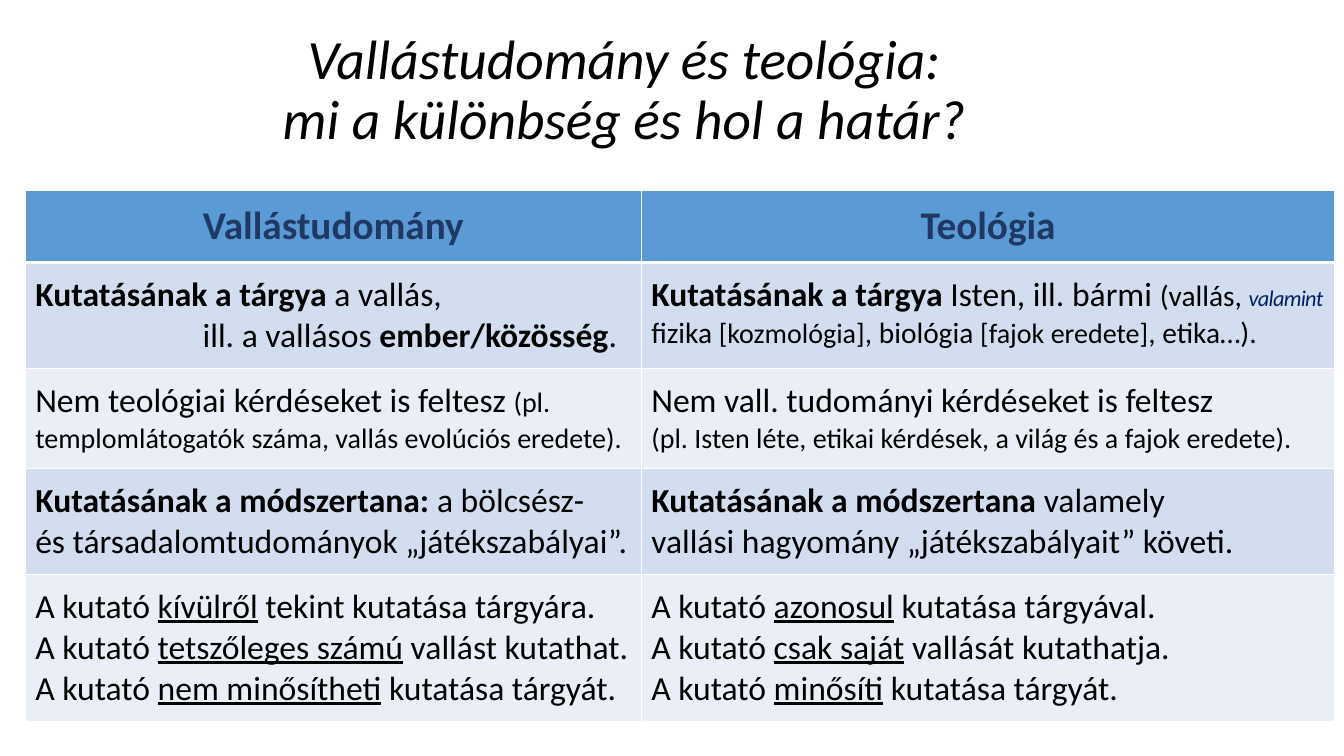
import pptx
import pptx.util
import pptx.dml.color
import pptx.enum.text
import pptx.oxml
from pptx.oxml.ns import nsdecls

Inches, Pt = pptx.util.Inches, pptx.util.Pt
ALIGN = pptx.enum.text.PP_ALIGN
MIDDLE = pptx.enum.text.MSO_ANCHOR.MIDDLE

COLORS = {"black": "000000", "navy": "203864", "ink": "002060", "white": "FFFFFF",
          "header": "5B9BD5", "odd": "D2DEEF", "even": "EAEFF7"}

# Each span is its text and the format values that differ from the defaults.
BOLD, UNDER = {"bold": True}, {"underline": True}
S20, S21 = {"size": 20}, {"size": 21}
HEAD = {"size": 28, "bold": True, "color": "navy"}
NOTE = {"size": 16, "italic": True, "color": "ink"}

TITLE = [("Vallástudomány és teológia:\nmi a különbség és hol a határ?",
          {"size": 39.6, "italic": True})]


def researcher(underlined, ending):
    return [("A kutató ", {}), (underlined, UNDER), (ending, {})]


# Rows of cells; a cell is a list of paragraphs, a paragraph a list of spans.
ROWS = [
    [[[("Vallástudomány", HEAD)]], [[("Teológia", HEAD)]]],
    [[[("Kutatásának a tárgya", BOLD), (" a vallás,", {})],
      [("ill. a vallásos ", {}), ("ember/közösség", BOLD), (".", {})]],
     [[("Kutatásának a tárgya", BOLD), (" Isten, ill. bármi ", {}), ("(vallás, ", S21),
       ("valamint", {**NOTE, "spacing": -50}), (" ", {**NOTE, "size": 12}),
       ("fizika ", S21), ("[kozmológia]", S20), (", biológia ", S21),
       ("[fajok eredete]", S20), (", etika…).", S21)]]],
    [[[("Nem teológiai kérdéseket is feltesz ", {}),
       ("(pl. templomlátogatók száma, vallás evolúciós eredete).", S20)]],
     [[("Nem vall. tudományi kérdéseket is feltesz", {}),
       (" \n(pl. Isten léte, etikai kérdések, a világ és a fajok eredete).", S20)]]],
    [[[("Kutatásának a módszertana:", BOLD),
       (" a bölcsész- \nés társadalomtudományok „játékszabályai”.", {})]],
     [[("Kutatásának a módszertana", BOLD),
       (" valamely \nvallási hagyomány „játékszabályait” követi.", {})]]],
    [[researcher("kívülről", " tekint kutatása tárgyára."),
      researcher("tetszőleges számú", " vallást kutathat."),
      researcher("nem minősítheti", " kutatása tárgyát.")],
     [researcher("azonosul", " kutatása tárgyával."),
      researcher("csak saját", " vallását kutathatja."),
      researcher("minősíti", " kutatása tárgyát.")]],
]
COLUMN_WIDTHS = [6.11, 6.88]
ROW_HEIGHTS = [0.69, 1.04, 0.98, 1.05, 1.45]
SECOND_LINE_INDENT = 1.66
MARGINS = {"margin_left": 0.1, "margin_right": 0.1, "margin_top": 0.12, "margin_bottom": 0.12}


def write_spans(para, spans):
    for text, changes in spans:
        look = {"size": 24, "bold": False, "italic": False, "underline": False,
                "color": "black", "spacing": 0, **changes}
        color, spacing = look.pop("color"), look.pop("spacing")
        look.update(size=Pt(look["size"]), name="Calibri")
        for number, line in enumerate(text.split("\n")):
            if number:
                para.add_line_break()
            span = para.add_run()
            span.text = line
            for name, value in look.items():
                setattr(span.font, name, value)
            span.font.color.rgb = pptx.dml.color.RGBColor.from_string(COLORS[color])
            if spacing:
                span.font._element.set("spc", str(spacing))


def add_borders(cell, bottom_width):
    properties = cell._tc.get_or_add_tcPr()
    for place, side in enumerate("LRTB"):
        width = Pt(bottom_width if side == "B" else 1)
        properties.insert(place, pptx.oxml.parse_xml(
            f'<a:ln{side} {nsdecls("a")} w="{width}"><a:solidFill>'
            f'<a:srgbClr val="{COLORS["white"]}"/></a:solidFill></a:ln{side}>'))


def fill_cell(cell, paragraphs, row):
    for name, value in MARGINS.items():
        setattr(cell, name, Inches(value))
    cell.fill.solid()
    shade = "header" if row == 0 else "odd" if row % 2 else "even"
    cell.fill.fore_color.rgb = pptx.dml.color.RGBColor.from_string(COLORS[shade])
    add_borders(cell, 3 if row == 0 else 1)
    frame = cell.text_frame
    for number, spans in enumerate(paragraphs):
        para = frame.add_paragraph() if number else frame.paragraphs[0]
        para.alignment = ALIGN.CENTER if row == 0 else ALIGN.LEFT
        write_spans(para, spans)


def add_title(page):
    title = page.shapes.title
    box = {"left": 0.44, "top": 0.21, "width": 11.5, "height": 1.4}
    for name, value in box.items():
        setattr(title, name, Inches(value))
    frame = title.text_frame
    frame.auto_size = pptx.enum.text.MSO_AUTO_SIZE.NONE
    frame.vertical_anchor = MIDDLE
    para = frame.paragraphs[0]
    para.alignment, para.line_spacing = ALIGN.CENTER, 0.9
    write_spans(para, TITLE)


def add_comparison(page):
    table = page.shapes.add_table(
        len(ROWS), len(COLUMN_WIDTHS), Inches(0.25), Inches(1.89),
        Inches(sum(COLUMN_WIDTHS)), Inches(sum(ROW_HEIGHTS))).table
    for column, width in zip(table.columns, COLUMN_WIDTHS):
        column.width = Inches(width)
    for number, (row, height) in enumerate(zip(table.rows, ROW_HEIGHTS)):
        row.height = Inches(height)
        for cell, paragraphs in zip(row.cells, ROWS[number]):
            fill_cell(cell, paragraphs, number)
    subject = table.cell(1, 0).text_frame.paragraphs[1]
    subject._p.get_or_add_pPr().set("marL", str(Inches(SECOND_LINE_INDENT)))


def main():
    deck = pptx.Presentation()
    deck.slide_width, deck.slide_height = Inches(13.33), Inches(7.5)
    page = deck.slides.add_slide(deck.slide_layouts[5])
    add_title(page)
    add_comparison(page)
    deck.save("out.pptx")


if __name__ == "__main__":
    main()
